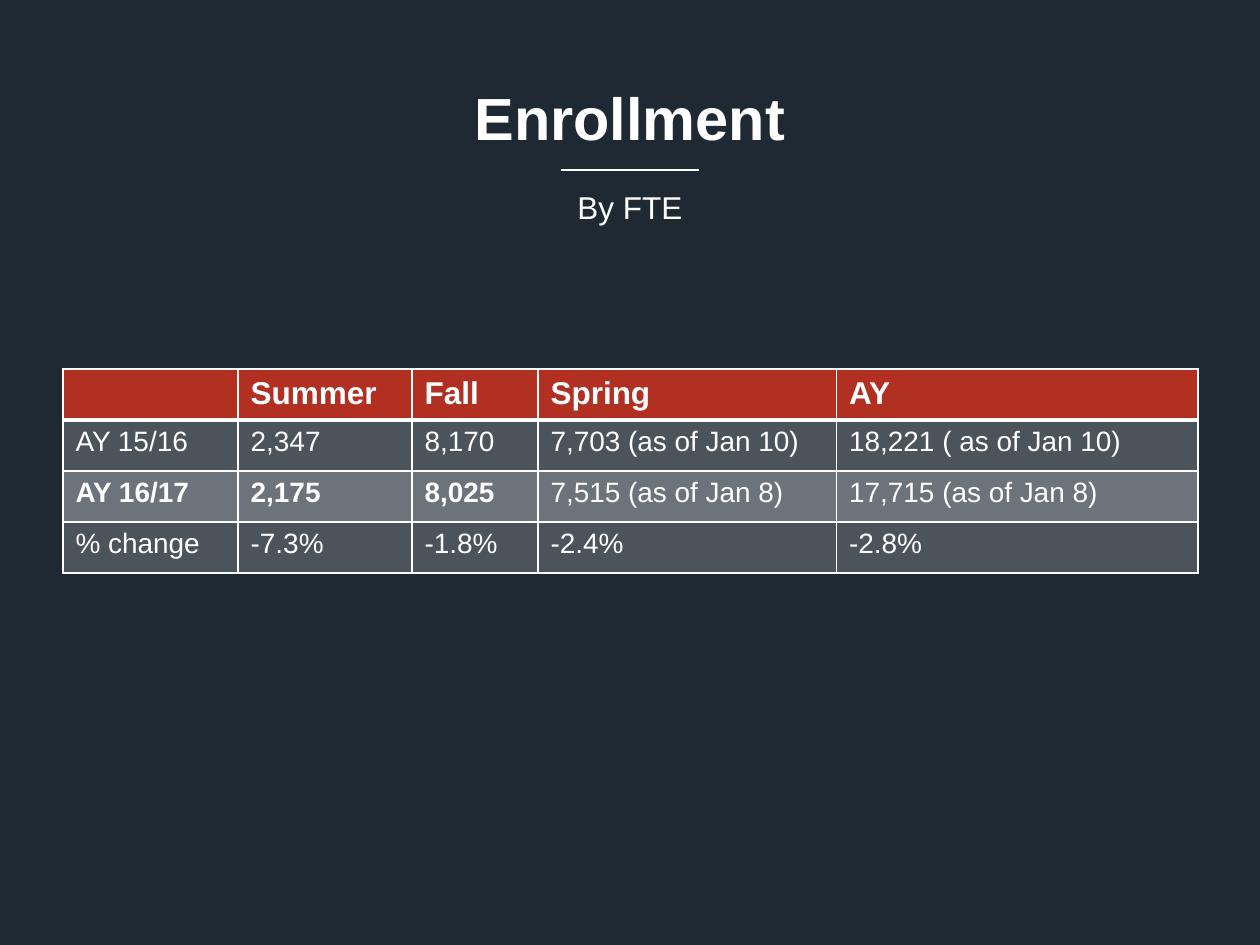
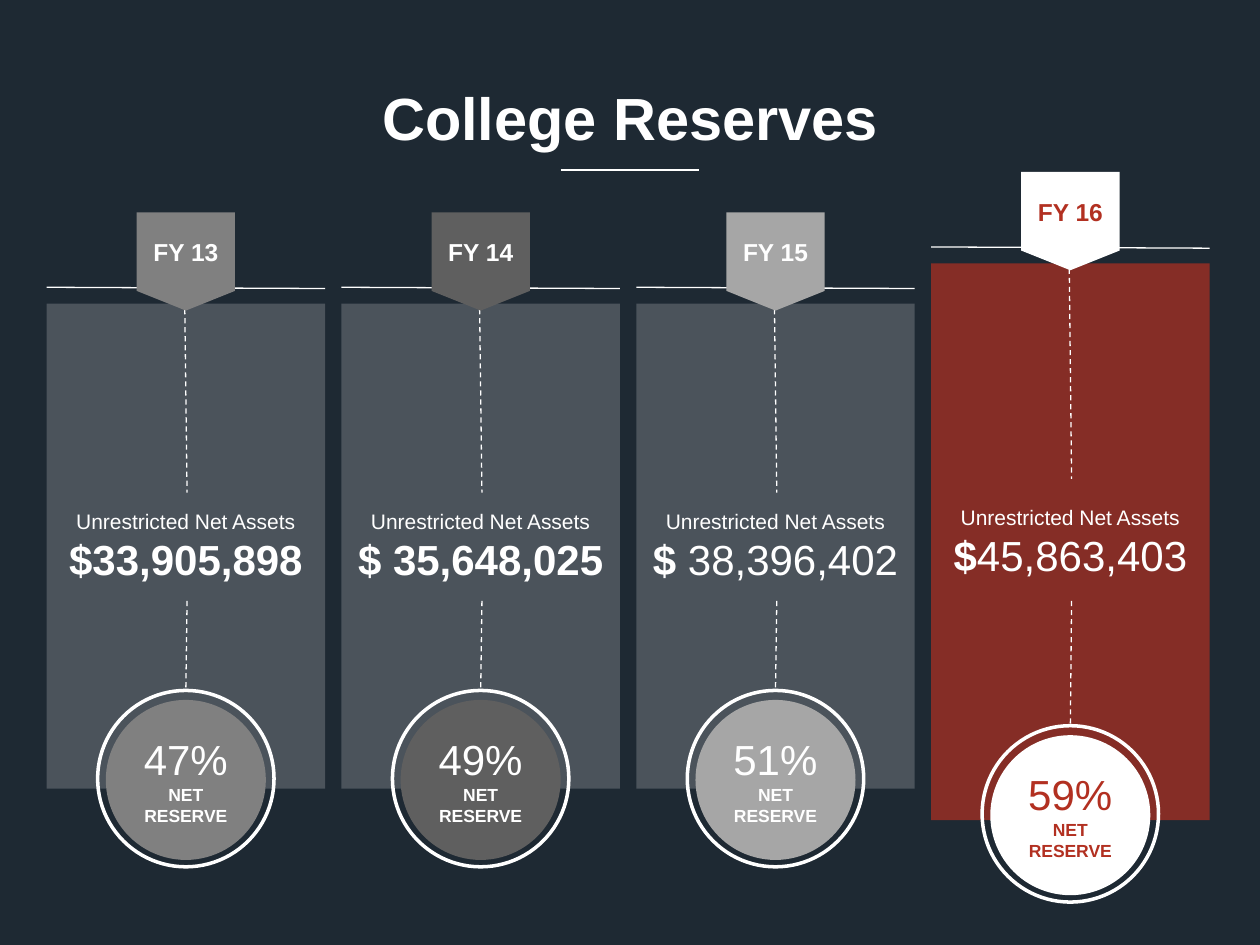
from collections import namedtuple
from dataclasses import dataclass

from lxml import etree
from pptx import Presentation
from pptx import util as u
from pptx.dml.color import RGBColor
from pptx.enum import dml, shapes, text
from pptx.oxml import ns

COLS, ROWS = 100, 75


@dataclass(frozen=True)
class Theme:
    font: str = "Arial"
    back: str = "1E2933"
    white: str = "FFFFFF"
    red: str = "B23021"
    greys: tuple = ("808080", "5F5F5F", "A6A6A6")
    title: int = 34
    big: int = 24
    head: int = 18
    body: int = 16
    tag: int = 14
    label: int = 12
    small: int = 10
    light: int = 20
    medium: int = 35
    strong: int = 70
    thin: float = 0.75
    ring: float = 2


Card = namedtuple("Card", "year amount share fill ink panel alpha top height ring stem")


class Deck:
    def __init__(self, theme):
        self.t = theme
        self.prs = Presentation()
        self.prs.slide_width, self.prs.slide_height = u.Inches(10), u.Inches(7.5)
        self.s = None

    def x(self, cols):
        return round(self.prs.slide_width * cols / COLS)

    def y(self, rows):
        return round(self.prs.slide_height * rows / ROWS)

    def box(self, left, top, width, height):
        return self.x(left), self.y(top), self.x(width), self.y(height)

    def slide(self, title):
        """Start a slide with the shared background, title and rule."""
        self.s = self.prs.slides.add_slide(self.prs.slide_layouts[6])
        self.paint(self.s.background.fill, self.t.back)
        self.textbox((5, 3, 90, 12.5), [[(title, self.t.title, True)]], text.MSO_ANCHOR.MIDDLE)
        self.line((44.5, 13.5), (55.5, 13.5))

    def paint(self, fill, colour, element=None, alpha=None):
        """Fill with a solid colour; alpha is the opacity in percent."""
        fill.solid()
        fill.fore_color.rgb = RGBColor.from_string(colour)
        if alpha:
            clr = next(element.iter(ns.qn("a:srgbClr")))
            etree.SubElement(clr, ns.qn("a:alpha"), val=str(alpha * 1000))

    def add_text(self, tf, paragraphs, colour, align=text.PP_ALIGN.CENTER):
        """Each paragraph is a list of (text, size, bold) runs."""
        for i, runs in enumerate(paragraphs):
            p = tf.add_paragraph() if i else tf.paragraphs[0]
            p.alignment = align
            for words, size, bold in runs:
                r = p.add_run()
                r.text = words
                style = {"name": self.t.font, "size": u.Pt(size), "bold": bold}
                for key, value in style.items():
                    setattr(r.font, key, value)
                r.font.color.rgb = RGBColor.from_string(colour)

    def textbox(self, box, paragraphs, anchor=text.MSO_ANCHOR.TOP):
        tf = self.s.shapes.add_textbox(*self.box(*box)).text_frame
        for key, value in {"word_wrap": True, "vertical_anchor": anchor}.items():
            setattr(tf, key, value)
        self.add_text(tf, paragraphs, self.t.white)

    def shape(self, kind, box, fill=None, alpha=None, outline=None, paragraphs=(), ink=None):
        sp = self.s.shapes.add_shape(kind, *self.box(*box))
        sp.shadow.inherit = False
        if fill:
            self.paint(sp.fill, fill, sp._element, alpha)
        else:
            sp.fill.background()
        if outline:
            self.stroke(sp.line, outline)
        else:
            sp.line.fill.background()
        sp.text_frame.vertical_anchor = text.MSO_ANCHOR.MIDDLE
        self.add_text(sp.text_frame, paragraphs, ink or self.t.white)

    def stroke(self, line, width):
        line.color.rgb = RGBColor.from_string(self.t.white)
        line.width = u.Pt(width)

    def line(self, start, end, dashed=False):
        ends = self.x(start[0]), self.y(start[1]), self.x(end[0]), self.y(end[1])
        c = self.s.shapes.add_connector(shapes.MSO_CONNECTOR.STRAIGHT, *ends)
        self.stroke(c.line, self.t.thin)
        if dashed:
            c.line.dash_style = dml.MSO_LINE.DASH
        etree.SubElement(c._element.spPr, ns.qn("a:effectLst"))

    def borders(self, cell, **widths):
        """Widths in points for the sides L, R, T and B, in that order."""
        tcPr = cell._tc.get_or_add_tcPr()
        for i, (side, width) in enumerate(widths.items()):
            ln = etree.Element(ns.qn(f"a:ln{side}"), w=str(int(u.Pt(width))))
            fill = etree.SubElement(ln, ns.qn("a:solidFill"))
            etree.SubElement(fill, ns.qn("a:srgbClr"), val=self.t.white)
            tcPr.insert(i, ln)

    def table(self, box, widths, rows, bold_cells):
        t = self.t
        tbl = self.s.shapes.add_table(len(rows), len(widths), *self.box(*box)).table
        for col, width in zip(tbl.columns, widths):
            col.width = self.x(width)
        for i, row in enumerate(rows):
            head = i == 0
            colour, alpha = (t.red, None) if head else (t.white, t.light if i % 2 else t.medium)
            for j, words in enumerate(row):
                cell = tbl.cell(i, j)
                self.paint(cell.fill, colour, cell._tc, alpha)
                self.borders(cell, L=1, R=1, T=3 if i == 1 else 1, B=3 if head else 1)
                if words:
                    run = words, t.head if head else t.body, head or (i, j) in bold_cells
                    self.add_text(cell.text_frame, [[run]], t.white, text.PP_ALIGN.LEFT)

    def card(self, left, card):
        """Draw one year: panel, ringed share, stems and tag."""
        t, kinds = self.t, shapes.MSO_SHAPE
        width, ring, disc, tag = 22.1, 14, 12.7, 7.8
        mid = left + width / 2
        amount = [(words, t.big, bold) for words, bold in card.amount]
        self.shape(kinds.RECTANGLE, (left, card.top, width, card.height), card.panel, card.alpha,
                   paragraphs=[[("Unrestricted Net Assets", t.label, False)], amount])
        self.shape(kinds.OVAL, (mid - ring / 2, card.ring, ring, ring), outline=t.ring)
        self.shape(kinds.OVAL, (mid - disc / 2, card.ring + 0.75, disc, disc), card.fill,
                   paragraphs=[[(card.share, t.big, False)], [("NET RESERVE", t.small, True)]],
                   ink=card.ink)
        self.line((left, card.top - 1.3), (left + width, card.top - 1.2))
        self.line((mid - 0.1, card.top - 1), (mid + 0.1, card.stem), dashed=True)
        self.line((mid + 0.1, 47.7), (mid, card.ring), dashed=True)
        self.shape(kinds.FLOWCHART_OFFPAGE_CONNECTOR, (mid - tag / 2, card.top - 7.25, tag, tag),
                   card.fill, paragraphs=[[(card.year, t.tag, True)]], ink=card.ink)


def enrollment(d):
    d.slide("Enrollment")
    rows = [
        ("", "Summer", "Fall", "Spring", "AY"),
        ("AY 15/16", "2,347", "8,170", "7,703 (as of Jan 10)", "18,221 ( as of Jan 10)"),
        ("AY 16/17", "2,175", "8,025", "7,515 (as of Jan 8)", "17,715 (as of Jan 8)"),
        ("% change", "-7.3%", "-1.8%", "-2.4%", "-2.8%"),
    ]
    d.table((5, 29.3, 90, 16.2), (13.9, 13.8, 10, 23.7, 28.7), rows,
            bold_cells={(2, 0), (2, 1), (2, 2)})
    d.textbox((33.8, 14.4, 32.4, 4), [[("By FTE", d.t.head, False)]])


def reserves(d):
    d.slide("College Reserves")
    t = d.t
    past_years = [
        ("FY 13", [("$33,905,898", True)], "47%"),
        ("FY 14", [("$ 35,648,025", True)], "49%"),
        ("FY 15", [("$ ", True), ("38,396,402", False)], "51%"),
    ]
    cards = [Card(*year, grey, t.white, t.white, t.light, 24.1, 38.5, 54.8, 39.1)
             for year, grey in zip(past_years, t.greys)]
    cards.append(Card("FY 16", [("$", True), ("45,863,403", False)], "59%",
                      t.white, t.red, t.red, t.strong, 20.9, 44.2, 57.6, 38))
    for i, card in enumerate(cards):
        d.card(3.7 + 23.4 * i, card)


def main():
    d = Deck(Theme())
    enrollment(d)
    reserves(d)
    d.prs.save("out.pptx")


if __name__ == "__main__":
    main()
